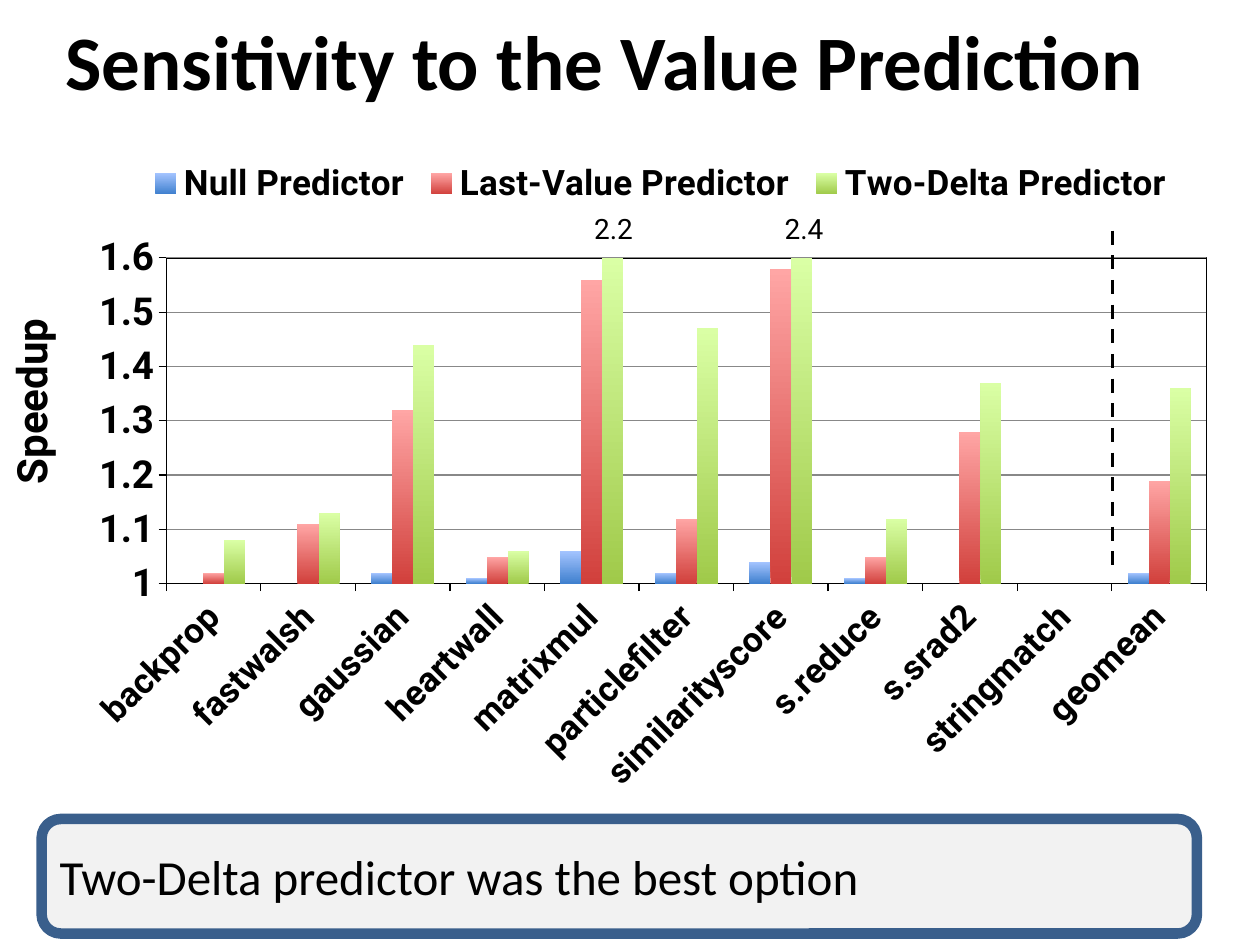
import pptx
import pptx.chart.data
import pptx.dml.color
import pptx.enum.chart
import pptx.enum.dml
import pptx.enum.shapes
import pptx.enum.text
import pptx.oxml
import pptx.oxml.ns
import pptx.util
from pptx.util import Cm, Pt

COLORS = {"text": "000000", "grid": "888888", "box": "F2F2F2", "border": "3A5F8C",
          "plot": "FFFFFF"}
HEADING = "Sensitivity to the Value Prediction"
CONCLUSION = "Two-Delta predictor was the best option"
BENCHMARKS = ["backprop", "fastwalsh", "gaussian", "heartwall", "matrixmul",
              "particlefilter", "similarityscore", "s.reduce", "s.srad2",
              "stringmatch", "geomean"]
# name, speedups, gradient from the bottom of the bar to its top
PREDICTORS = [
    ("Null Predictor", (1, 1, 1.02, 1.01, 1.06, 1.02, 1.04, 1.01, 1, 1, 1.02),
     ("3F80CE", "A4C4FF")),
    ("Last-Value Predictor", (1.02, 1.11, 1.32, 1.05, 1.56, 1.12, 1.58, 1.05, 1.28, 1, 1.19),
     ("D1403C", "FFA6A5")),
    ("Two-Delta Predictor", (1.08, 1.13, 1.44, 1.06, 2.2, 1.47, 2.36, 1.12, 1.37, 1, 1.36),
     ("A0CA4A", "DAFFA5")),
]
CLIPPED_BARS = [("2.2", 11.73), ("2.4", 15.57)]  # label, left in cm
# left, top, width, height in cm; plot and legend are measured within the chart
CHART_BOX = (1.42, 3.18, 23.34, 13.08)
PLOT_BOX = (1.93, 2.02, 20.97, 6.57)
LEGEND_BOX = (1.4, 0.05, 21, 0.95)


def rgb(value):
    return pptx.dml.color.RGBColor.from_string(value)


def style_font(font, size, name="Roboto", bold=False):
    font.size, font.name, font.bold = Pt(size), name, bold
    font.color.rgb = rgb(COLORS["text"])


def style_line(line, color, width):
    line.color.rgb = rgb(color)
    line.width = Pt(width)


def write(shape, text, size, name="Roboto", bold=False, wrap=True, middle=False):
    frame = shape.text_frame
    frame.word_wrap = wrap
    if middle:
        frame.vertical_anchor = pptx.enum.text.MSO_ANCHOR.MIDDLE
    paragraph = frame.paragraphs[0]
    paragraph.alignment = pptx.enum.text.PP_ALIGN.LEFT
    run = paragraph.add_run()
    run.text = text
    style_font(run.font, size, name, bold)


def add_text(slide, box, text, size, **options):
    label = slide.shapes.add_textbox(*map(Cm, box))
    write(label, text, size, **options)
    return label


def place_in_chart(part, index, box, target=""):
    """Put a manual layout at the given child index of a chart part."""
    for old in part.findall(pptx.oxml.ns.qn("c:layout")):
        part.remove(old)
    shares = "".join(f'<c:{key} val="{length / whole:.4f}"/>'
                     for key, length, whole in zip("xywh", box, CHART_BOX[2:] * 2))
    part.insert(index, pptx.oxml.parse_xml(
        f'<c:layout {pptx.oxml.ns.nsdecls("c")}><c:manualLayout>{target}'
        f'<c:xMode val="edge"/><c:yMode val="edge"/>{shares}</c:manualLayout></c:layout>'))


def frame_plot(plot_area):
    plot_area.append(pptx.oxml.parse_xml(
        f'<c:spPr {pptx.oxml.ns.nsdecls("c", "a")}>'
        f'<a:solidFill><a:srgbClr val="{COLORS["plot"]}"/></a:solidFill>'
        f'<a:ln w="{Pt(0.75)}"><a:solidFill><a:srgbClr val="{COLORS["text"]}"/>'
        '</a:solidFill></a:ln></c:spPr>'))


def add_speedup_chart(slide):
    data = pptx.chart.data.CategoryChartData()
    data.categories = BENCHMARKS
    for name, speedups, _ in PREDICTORS:
        data.add_series(name, speedups)
    chart = slide.shapes.add_chart(
        pptx.enum.chart.XL_CHART_TYPE.COLUMN_CLUSTERED, *map(Cm, CHART_BOX), data).chart
    style_font(chart.font, 10, "Calibri")
    chart.has_title = False
    chart.has_legend = True
    chart.legend.position = pptx.enum.chart.XL_LEGEND_POSITION.TOP
    chart.legend.include_in_layout = False
    style_font(chart.legend.font, 20, bold=True)

    plot = chart.plots[0]
    plot.gap_width, plot.overlap, plot.vary_by_categories = 150, 0, False
    for series, (_, _, gradient) in zip(plot.series, PREDICTORS):
        fill = series.format.fill
        fill.gradient()
        fill.gradient_angle = 90
        for stop, color in zip(fill.gradient_stops, gradient):
            stop.color.rgb = rgb(color)

    for axis, size in ((chart.category_axis, 20), (chart.value_axis, 22)):
        style_font(axis.tick_labels.font, size, bold=True)
        style_line(axis.format.line, COLORS["text"], 0.75)
        axis.major_tick_mark = pptx.enum.chart.XL_TICK_MARK.OUTSIDE
    speedup = chart.value_axis
    speedup.minimum_scale, speedup.maximum_scale, speedup.major_unit = 1, 1.6, 0.1
    speedup.tick_labels.number_format = "General"
    speedup.tick_labels.number_format_is_linked = False
    style_line(speedup.major_gridlines.format.line, COLORS["grid"], 0.75)
    label_body = chart.category_axis._element.find(
        f'{pptx.oxml.ns.qn("c:txPr")}/{pptx.oxml.ns.qn("a:bodyPr")}')
    label_body.set("rot", str(-45 * 60000))
    label_body.set("vert", "horz")

    plot_area = plot._element.getparent()
    place_in_chart(plot_area, 0, PLOT_BOX, '<c:layoutTarget val="inner"/>')
    frame_plot(plot_area)
    place_in_chart(chart.legend._element, 1, LEGEND_BOX)


def add_geomean_divider(slide):
    divider = slide.shapes.add_connector(
        pptx.enum.shapes.MSO_CONNECTOR.STRAIGHT, Cm(22.43), Cm(4.65), Cm(22.43), Cm(11.46))
    style_line(divider.line, COLORS["text"], 2)
    divider.line.dash_style = pptx.enum.dml.MSO_LINE.DASH
    divider._element.spPr.append(pptx.oxml.parse_xml(
        f'<a:effectLst {pptx.oxml.ns.nsdecls("a")}/>'))


def add_conclusion(slide):
    conclusion = slide.shapes.add_shape(
        pptx.enum.shapes.MSO_SHAPE.ROUNDED_RECTANGLE,
        Cm(0.84), Cm(16.51), Cm(23.29), Cm(2.31))
    conclusion.shadow.inherit = False
    conclusion.fill.solid()
    conclusion.fill.fore_color.rgb = rgb(COLORS["box"])
    style_line(conclusion.line, COLORS["border"], 6)
    write(conclusion, CONCLUSION, 28, "Calibri", middle=True)


def main():
    deck = pptx.Presentation()
    deck.slide_width, deck.slide_height = Cm(25.4), Cm(19.05)
    slide = deck.slides.add_slide(deck.slide_layouts[6])
    add_text(slide, (1.07, -0.38, 22.86, 3.18), HEADING, 44,
             name="Calibri", bold=True, middle=True)
    add_conclusion(slide)
    add_speedup_chart(slide)
    axis_title = add_text(slide, (-1.4, 7.44, 3.96, 1.19), "Speedup", 24, bold=True, wrap=False)
    axis_title.rotation = 270
    add_geomean_divider(slide)
    for value, left in CLIPPED_BARS:
        add_text(slide, (left, 4.14, 1.52, 1.04), value, 16, wrap=False)
    deck.save("out.pptx")


if __name__ == "__main__":
    main()
